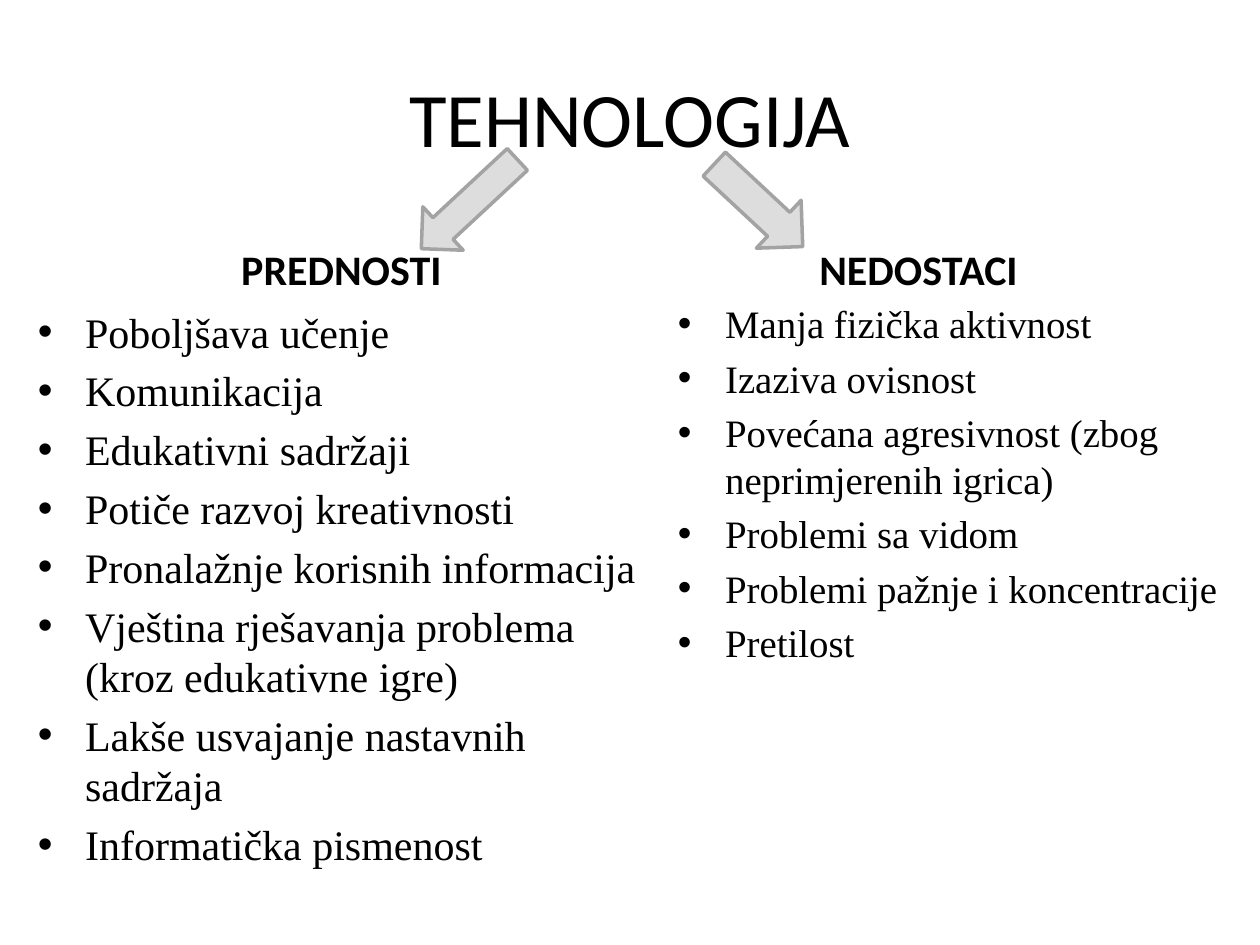
from dataclasses import dataclass

from pptx import Presentation
from pptx.dml.color import RGBColor
from pptx.enum.shapes import MSO_SHAPE
from pptx.enum.text import MSO_ANCHOR, MSO_AUTO_SIZE, PP_ALIGN
from pptx.util import Inches, Pt

DOWN_ARROW = MSO_SHAPE.DOWN_ARROW
CENTER, LEFT = PP_ALIGN.CENTER, PP_ALIGN.LEFT
TOP, MIDDLE, BOTTOM = MSO_ANCHOR.TOP, MSO_ANCHOR.MIDDLE, MSO_ANCHOR.BOTTOM
NO_AUTOFIT = MSO_AUTO_SIZE.NONE
COMPARISON_LAYOUT = 4
HEADING_FONT, LIST_FONT = "Calibri", "Times New Roman"
BLACK, ARROW_FILL, ARROW_LINE = "000000", "DDDDDD", "A3A3A3"


@dataclass(frozen=True)
class Frame:
    """Position and size in inches."""
    left: float
    top: float
    width: float
    height: float

    def lengths(self) -> tuple:
        """Return the four values as lengths."""
        return tuple(map(Inches, (self.left, self.top, self.width, self.height)))


@dataclass(frozen=True)
class Column:
    """A heading, its list and the arrow leading to it."""
    heading: str
    heading_frame: Frame
    items: tuple[str, ...]
    list_frame: Frame
    list_size: float
    arrow_frame: Frame
    arrow_angle: float


COLUMNS = (
    Column(
        "PREDNOSTI", Frame(0.5, 1.68, 4.42, 0.7),
        ("Poboljšava učenje", "Komunikacija", "Edukativni sadržaji",
         "Potiče razvoj kreativnosti", "Pronalažnje korisnih informacija",
         "Vještina rješavanja problema (kroz edukativne igre)",
         "Lakše usvajanje nastavnih sadržaja", "Informatička pismenost"),
        Frame(0.2, 2.38, 4.96, 4.92), 24, Frame(3.49, 1.1, 0.47, 1.04), 47.1),
    Column(
        "NEDOSTACI", Frame(5.08, 1.68, 4.42, 0.7),
        ("Manja fizička aktivnost", "Izaziva ovisnost",
         "Povećana agresivnost (zbog neprimjerenih igrica)",
         "Problemi sa vidom", "Problemi pažnje i koncentracije", "Pretilost"),
        Frame(5.28, 2.33, 4.72, 3.34), 22.2, Frame(5.76, 1.15, 0.52, 0.96), 313),
)


def color(value: str) -> RGBColor:
    """Turn a hex string into a colour."""
    return RGBColor.from_string(value)


def place(shape, frame: Frame) -> None:
    """Move and size a shape."""
    shape.left, shape.top, shape.width, shape.height = frame.lengths()


def write(box, frame: Frame, *lines: str, font: str, size: float,
          bold: bool = False, align=LEFT, anchor=TOP) -> None:
    """Fill a placeholder with one formatted paragraph per line."""
    place(box, frame)
    text = box.text_frame
    text.word_wrap = True
    text.auto_size = NO_AUTOFIT
    text.vertical_anchor = anchor
    for index, line in enumerate(lines):
        para = text.add_paragraph() if index else text.paragraphs[0]
        para.alignment = align
        span = para.add_run()
        span.text = line
        span.font.name = font
        span.font.size = Pt(size)
        span.font.bold = bold
        span.font.color.rgb = color(BLACK)


def draw_arrow(page, frame: Frame, angle: float) -> None:
    """Draw a rotated block arrow."""
    arrow = page.shapes.add_shape(DOWN_ARROW, *frame.lengths())
    arrow.rotation = angle
    arrow.shadow.inherit = False
    arrow.fill.solid()
    arrow.fill.fore_color.rgb = color(ARROW_FILL)
    arrow.line.color.rgb = color(ARROW_LINE)
    arrow.line.width = Pt(2)


def main() -> None:
    """Build and save the deck."""
    deck = Presentation()
    deck.slide_width, deck.slide_height = Inches(10), Inches(7.5)
    page = deck.slides.add_slide(deck.slide_layouts[COMPARISON_LAYOUT])
    title, *boxes = page.placeholders
    write(title, Frame(0.5, 0.3, 9, 1.25), "TEHNOLOGIJA",
          font=HEADING_FONT, size=44, align=CENTER, anchor=MIDDLE)
    for column, heading, body in zip(COLUMNS, boxes[::2], boxes[1::2]):
        write(heading, column.heading_frame, column.heading,
              font=HEADING_FONT, size=24, bold=True, align=CENTER, anchor=BOTTOM)
        write(body, column.list_frame, *column.items,
              font=LIST_FONT, size=column.list_size)
        draw_arrow(page, column.arrow_frame, column.arrow_angle)
    deck.save("out.pptx")


if __name__ == "__main__":
    main()
